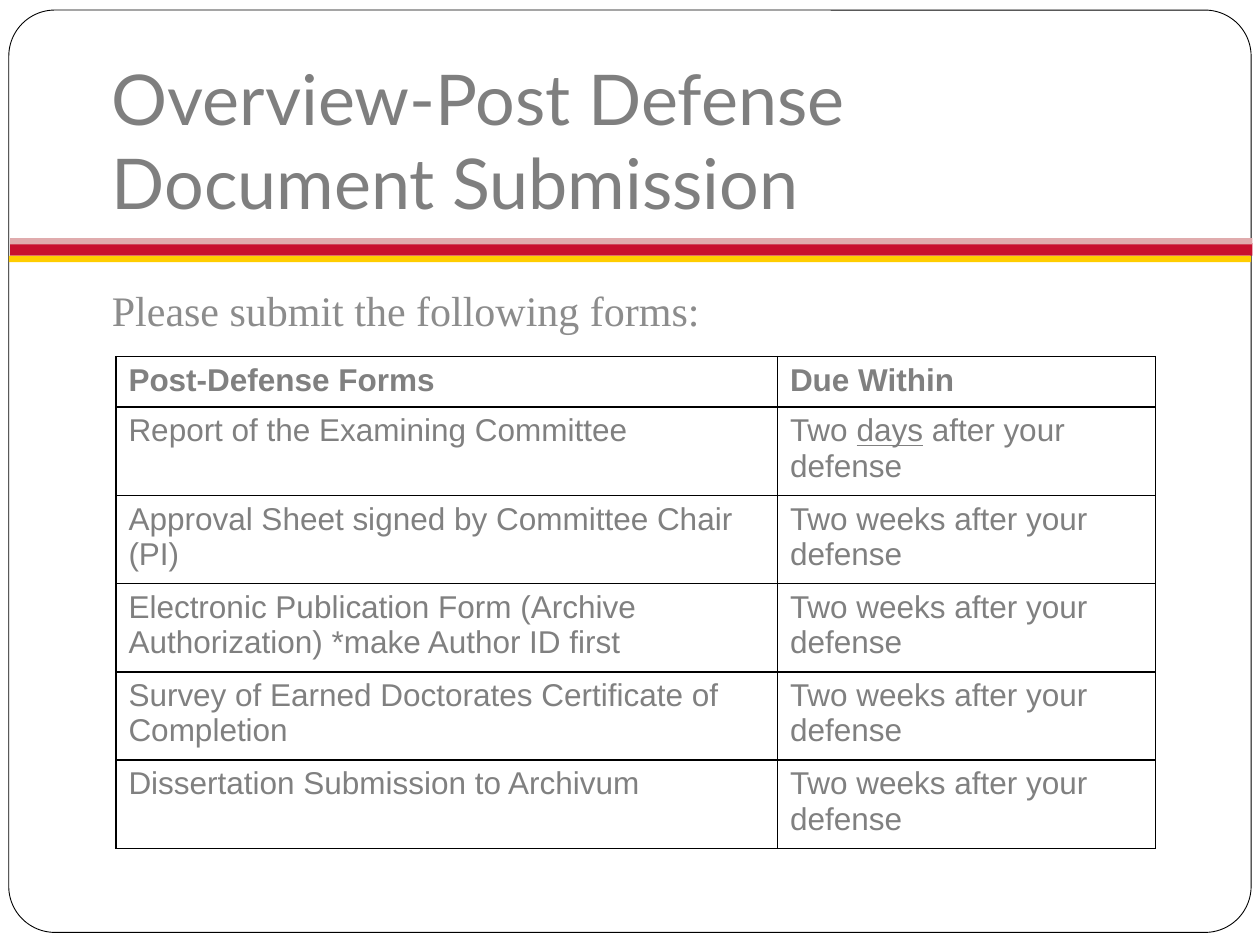
from lxml.etree import SubElement
from pptx import Presentation
from pptx.dml.color import RGBColor
from pptx.enum.shapes import MSO_SHAPE
from pptx.enum.text import MSO_ANCHOR
from pptx.oxml.ns import qn
from pptx.util import Inches, Pt


def tint(code):
    return RGBColor.from_string(code)


def write(frame, text, size=18, font="Arial", color="808080", bold=False, under=""):
    frame.word_wrap = True
    head, mark, tail = text.partition(under) if under else (text, "", "")
    for part in filter(None, (head, mark, tail)):
        run = frame.paragraphs[0].add_run()
        run.text = part
        run.font.size = Pt(size)
        run.font.name = font
        run.font.bold = bold
        run.font.underline = part == mark
        run.font.color.rgb = tint(color)


def shape(slide, kind, box, fill, line=None):
    item = slide.shapes.add_shape(kind, *map(Inches, box))
    item.shadow.inherit = False
    item.fill.solid()
    item.fill.fore_color.rgb = tint(fill)
    if line:
        item.line.color.rgb = tint(line)
        item.line.width = Pt(0.5)
    else:
        item.line.fill.background()
    return item


def frame(slide, box):
    left, top, width, height = box
    card = shape(slide, MSO_SHAPE.ROUNDED_RECTANGLE, box, "FFFFFF", "000000")
    card.adjustments[0] = 0.05
    bands = [(0.01, 1.85, 0.1, "C8102E"), (0.01, 1.81, 0.05, "E0ABAD"),
             (0, 1.95, 0.05, "FFCD00")]
    for dx, dy, deep, fill in bands:
        shape(slide, MSO_SHAPE.RECTANGLE, (left + dx, top + dy, width, deep), fill)


def label(slide, box, text, anchor=MSO_ANCHOR.TOP, base=0.05, **style):
    body = slide.shapes.add_textbox(*map(Inches, box)).text_frame
    body.vertical_anchor = anchor
    body.margin_bottom = Inches(base)
    write(body, text, **style)


def edge(cell):
    props = cell._tc.get_or_add_tcPr()
    for spot, side in enumerate(("lnL", "lnR", "lnT", "lnB")):
        line = SubElement(props, qn("a:" + side), w=str(Pt(1)))
        fill = SubElement(line, qn("a:solidFill"))
        SubElement(fill, qn("a:srgbClr"), val="000000")
        props.insert(spot, line)


def grid(slide, box, rows, cols, highs):
    table = slide.shapes.add_table(len(rows), len(cols), *map(Inches, box)).table
    table.first_row = table.horz_banding = False
    for col, wide in zip(table.columns, cols):
        col.width = Inches(wide)
    for r, (row, high) in enumerate(zip(rows, highs)):
        table.rows[r].height = Inches(high)
        for c, text in enumerate(row):
            cell = table.cell(r, c)
            cell.fill.background()
            edge(cell)
            write(cell.text_frame, text, bold=r == 0, under="days")


def main():
    deck = Presentation()
    deck.slide_width, deck.slide_height = Inches(10), Inches(7.5)
    slide = deck.slides.add_slide(deck.slide_layouts[6])
    frame(slide, (0.07, 0.08, 9.86, 7.32))
    label(slide, (0.79, 0.38, 8.5, 1.49), "Overview-Post Defense Document Submission",
          MSO_ANCHOR.BOTTOM, 0.1, size=40, font="Lato", color="7F7F7F")
    label(slide, (0.79, 2.21, 8.5, 0.5), "Please submit the following forms:",
          size=24, font="Times New Roman", color="8C8C8C")
    forms = ["Approval Sheet signed by Committee Chair (PI)",
             "Electronic Publication Form (Archive Authorization) *make Author ID first",
             "Survey of Earned Doctorates Certificate of Completion",
             "Dissertation Submission to Archivum"]
    rows = [("Post-Defense Forms", "Due Within"),
            ("Report of the Examining Committee", "Two days after your defense")]
    rows += [(form, "Two weeks after your defense") for form in forms]
    grid(slide, (0.92, 2.83, 8.25, 3.68), rows, (5.25, 3), [0.38] + [0.66] * 5)
    deck.save("out.pptx")


if __name__ == "__main__":
    main()
